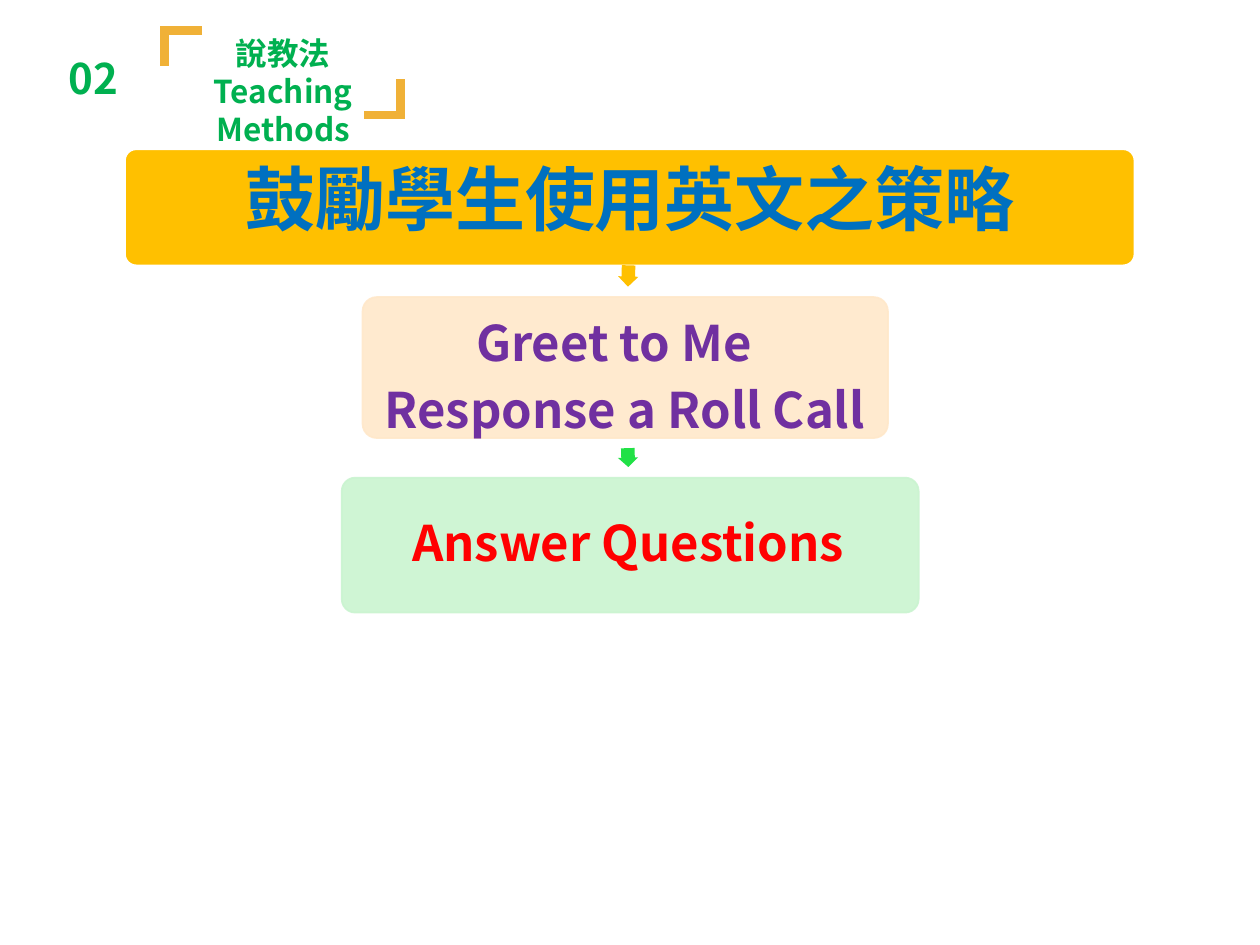
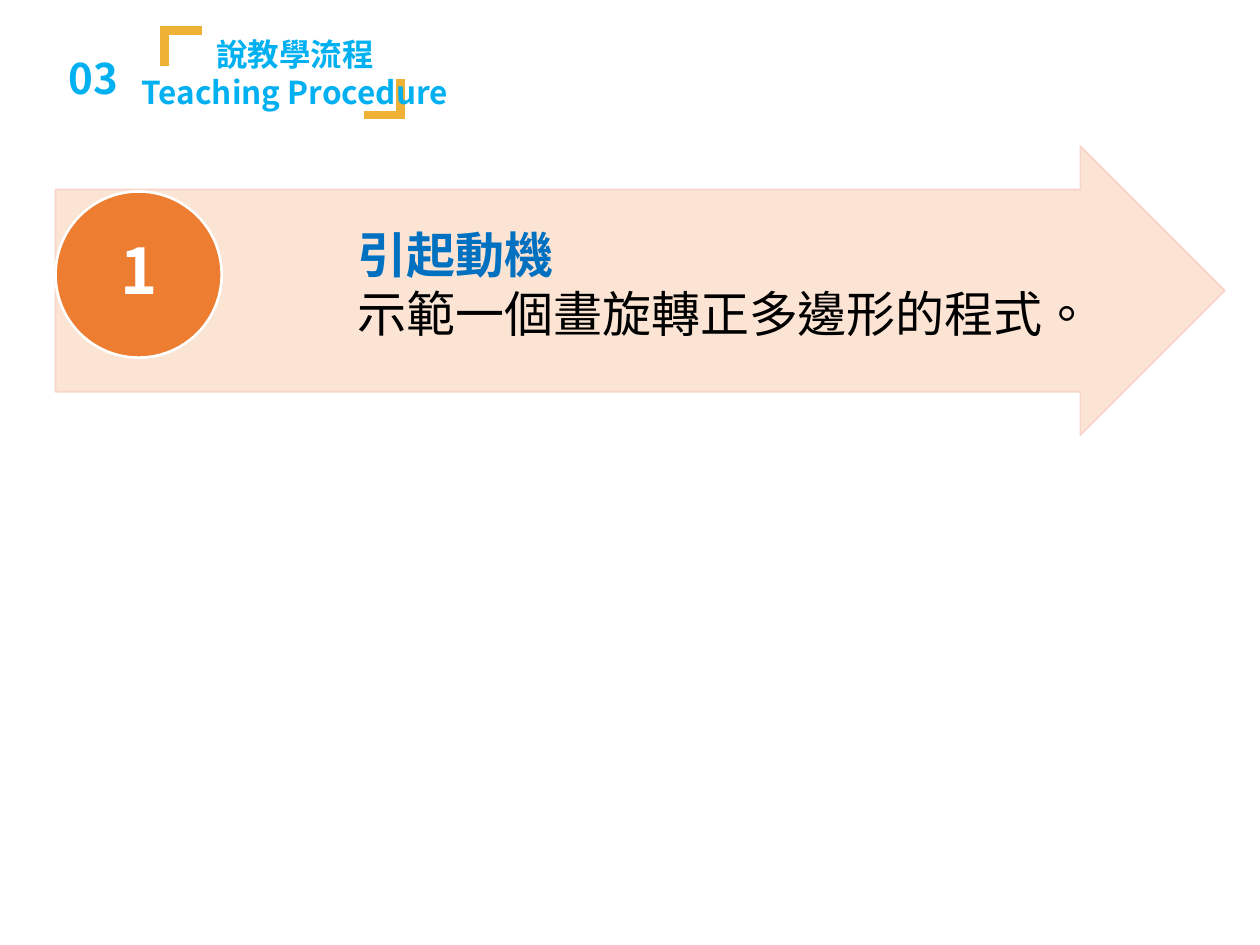
from lxml import etree
from pptx import Presentation
from pptx import util as u
from pptx.dml import color as dml
from pptx.enum import shapes, text
from pptx.oxml import ns

FONT = "Noto Sans CJK TC"
GREEN, SKY, BLUE, GOLD = "00B050", "00B0F0", "0070C0", "FFC000"
BRACKET, WHITE = "F0B137", "FFFFFF"
HEADING_INSETS = (0.25, 0.13, 0.25, 0)
CENTER = text.PP_ALIGN.CENTER
MIDDLE = text.MSO_ANCHOR.MIDDLE
SHAPE = shapes.MSO_SHAPE


def rgb(hex_color):
    return dml.RGBColor.from_string(hex_color)


def apply_format(target, values):
    for name, value in values.items():
        setattr(target, name, value)


def paint(fill, hex_color, opacity=100):
    fill.solid()
    fill.fore_color.rgb = rgb(hex_color)
    if opacity < 100:
        solid = fill._xPr.find(ns.qn("a:solidFill"))
        alpha = etree.SubElement(solid[0], ns.qn("a:alpha"))
        alpha.set("val", str(opacity * 1000))


def add_block(slide, kind, box, fill, line=None, line_width=1, adjustments=(),
              opacity=100, rotation=0):
    shape = slide.shapes.add_shape(kind, *map(u.Cm, box))
    shape.rotation = rotation
    shape.shadow.inherit = False
    for index, value in enumerate(adjustments):
        shape.adjustments[index] = value
    paint(shape.fill, fill, opacity)
    if line:
        paint(shape.line.fill, line, opacity)
        shape.line.width = u.Pt(line_width)
    else:
        shape.line.fill.background()


def add_text(slide, box, lines, size, color, insets=(0.25, 0.13, 0.25, 0.13),
             anchor=text.MSO_ANCHOR.TOP, **paragraph_format):
    frame = slide.shapes.add_textbox(*map(u.Cm, box)).text_frame
    left, top, right, bottom = map(u.Cm, insets)
    apply_format(frame, {
        "word_wrap": True, "vertical_anchor": anchor,
        "margin_left": left, "margin_top": top,
        "margin_right": right, "margin_bottom": bottom,
    })
    for index, line in enumerate(lines):
        paragraph = frame.add_paragraph() if index else frame.paragraphs[0]
        apply_format(paragraph, paragraph_format)
        run = paragraph.add_run()
        run.text = line
        apply_format(run.font, {"size": u.Pt(size), "bold": True, "name": FONT})
        run.font.color.rgb = rgb(color)
        properties = run._r.get_or_add_rPr()
        properties.set("lang", "zh-TW")
        east_asian = etree.SubElement(properties, ns.qn("a:ea"))
        east_asian.set("typeface", FONT)
    return frame


def add_bracket(slide, points):
    start, *others = [(u.Cm(x), u.Cm(y)) for x, y in points]
    builder = slide.shapes.build_freeform(*start)
    builder.add_line_segments(others, close=False)
    shape = builder.convert_to_shape()
    shape.shadow.inherit = False
    shape.fill.background()
    paint(shape.line.fill, BRACKET)
    shape.line.width = u.Pt(5)
    miter = etree.SubElement(shape.line._get_or_add_ln(), ns.qn("a:miter"))
    miter.set("lim", "800000")


def add_section_slide(presentation, number, color, heading_box, heading):
    slide = presentation.slides.add_slide(presentation.slide_layouts[6])
    add_text(slide, (1.13, 0.93, 1.6, 1.27), [number], 24, color)
    add_bracket(slide, [(3.32, 1.33), (3.32, 0.61), (4.07, 0.61)])
    add_bracket(slide, [(8.08, 1.6), (8.08, 2.32), (7.33, 2.32)])
    add_text(slide, heading_box, heading, 18, color, HEADING_INSETS, alignment=CENTER)
    return slide


def add_card(slide, box, color):
    add_block(slide, SHAPE.ROUNDED_RECTANGLE, box, color, color,
              adjustments=[0.1], opacity=90)


def add_step_arrow(slide, box, color, rotation):
    add_block(slide, SHAPE.RIGHT_ARROW, box, color,
              adjustments=[0.667, 0.5], rotation=rotation)


def build_methods(presentation):
    slide = add_section_slide(presentation, "02", GREEN, (2.96, 0.56, 5.5, 2.4),
                              ["說教法", "Teaching Methods"])
    add_block(slide, SHAPE.ROUNDED_RECTANGLE, (2.51, 3, 20.37, 2.36), GOLD,
              WHITE, 1.5, [0.1])
    add_text(slide, (2.58, 2.99, 20.24, 2.21), ["鼓勵學生使用英文之策略"], 40, BLUE,
             (0.15,) * 4, MIDDLE, alignment=CENTER, line_spacing=0.9)
    add_step_arrow(slide, (12.45, 5.36, 0.43, 0.41), GOLD, 91.7)
    add_card(slide, (7.31, 5.99, 10.59, 2.84), "FFE8CA")
    add_step_arrow(slide, (12.47, 9.02, 0.38, 0.41), "21E146", 88.3)
    add_card(slide, (6.89, 9.63, 11.63, 2.72), "CAF4D0")
    add_text(slide, (6.92, 10.06, 11.48, 2.57), ["Answer Questions"], 28, "FF0000",
             (0.1,) * 4, alignment=CENTER, line_spacing=1.14)
    greeting = add_text(slide, (7.05, 6.01, 10.65, 3.58),
                        ["Greet to Me", "Response a Roll Call"], 28, "7030A0",
                        alignment=CENTER, line_spacing=1.14)
    roll_call = greeting.paragraphs[1]._p.get_or_add_pPr()
    roll_call.set("marL", str(u.Cm(0.44)))
    roll_call.set("indent", "0")


def build_procedure(presentation):
    slide = add_section_slide(presentation, "03", SKY, (2.54, 0.58, 6.81, 1.68),
                              ["說教學流程", "Teaching Procedure"])
    add_block(slide, SHAPE.RIGHT_ARROW, (1.12, 2.95, 23.57, 5.82), "FBE4D4",
              "F7D5CB", adjustments=[0.7, 0.5])
    step = add_text(slide, (7.01, 3.81, 15.65, 4.09),
                    ["引起動機", "示範一個畫旋轉正多邊形的程式。"], 28, BLUE,
                    (0.2, 0.05, 0.1, 0.05), MIDDLE, line_spacing=0.71)
    description = step.paragraphs[1]
    description.space_before = u.Pt(9.8)
    description.runs[0].font.bold = False
    description.runs[0].font.color.rgb = rgb("000000")
    add_block(slide, SHAPE.OVAL, (1.12, 3.86, 3.35, 3.35), "ED7D31", WHITE, 1.5)
    add_text(slide, (1.6, 4.34, 2.39, 2.39), ["1"], 36, WHITE, (0.05,) * 4,
             MIDDLE, alignment=CENTER, line_spacing=0.9)


def main():
    presentation = Presentation()
    presentation.slide_width = u.Cm(25.4)
    presentation.slide_height = u.Cm(19.05)
    build_methods(presentation)
    build_procedure(presentation)
    presentation.save("out.pptx")


if __name__ == "__main__":
    main()
